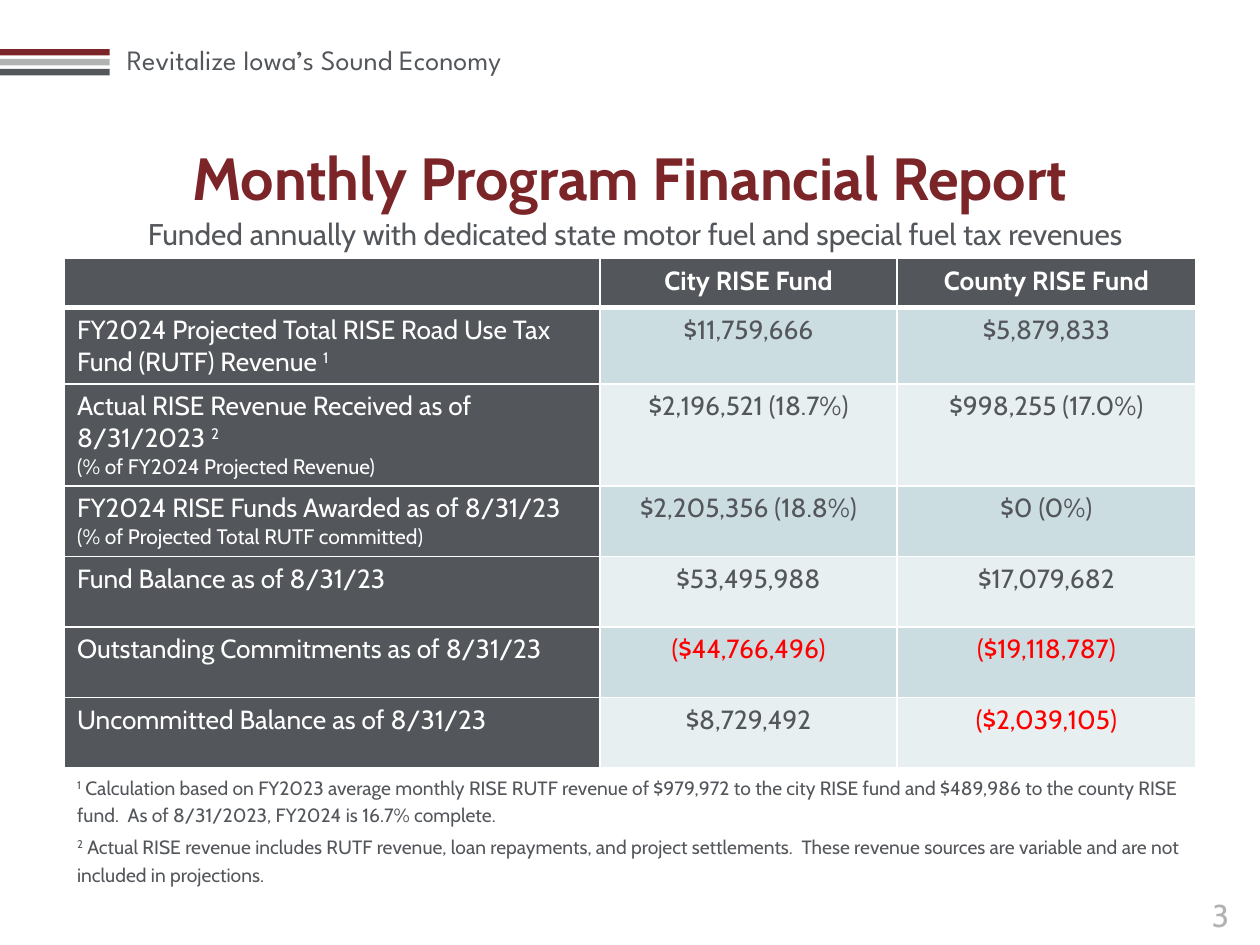
import pptx
import pptx.util
import pptx.dml.color
import pptx.enum.shapes
import pptx.enum.text
import pptx.oxml
import pptx.oxml.ns

Cm, Pt = pptx.util.Cm, pptx.util.Pt
ALIGN = pptx.enum.text.PP_ALIGN
ANCHOR = pptx.enum.text.MSO_ANCHOR

WHITE, GREY, SILVER = "FFFFFF", "53565A", "B1B3B3"
MAROON, RED = "7C2529", "FF0000"
BANDS = ["CCDDE2", "E7EFF1"]


def color(code):
    return pptx.dml.color.RGBColor.from_string(code)


class Deck:
    font = "Cabin"

    def __init__(self, wide, high):
        self.prs = pptx.Presentation()
        self.prs.slide_width, self.prs.slide_height = Cm(wide), Cm(high)
        self.slide = self.prs.slides.add_slide(self.prs.slide_layouts[1])

    def run(self, para, text, size, tone=GREY, bold=False, raised=False, font=None):
        run = para.add_run()
        run.text = text
        run.font.name = font or self.font
        run.font.size = Pt(size)
        run.font.bold = bold
        run.font.color.rgb = color(tone)
        if raised:
            run._r.get_or_add_rPr().set("baseline", "30000")

    def place(self, shape, left, top, wide, high):
        shape.left, shape.top = Cm(left), Cm(top)
        shape.width, shape.height = Cm(wide), Cm(high)
        shape.text_frame.word_wrap = True
        shape.text_frame.auto_size = pptx.enum.text.MSO_AUTO_SIZE.NONE
        return shape.text_frame

    def title(self, text, size, *box):
        frame = self.place(self.slide.shapes.title, *box)
        frame.vertical_anchor = ANCHOR.MIDDLE
        para = frame.paragraphs[0]
        para.alignment = ALIGN.CENTER
        self.run(para, text, size, MAROON, bold=True)

    def notes(self, lines, size, *box):
        """Numbered footnotes in the body placeholder."""
        frame = self.place(self.slide.placeholders[1], *box)
        for num, text in enumerate(lines, 1):
            para = frame.paragraphs[0] if num == 1 else frame.add_paragraph()
            props = para._p.get_or_add_pPr()
            props.set("marL", "0")
            props.set("indent", "0")
            props.append(pptx.oxml.parse_xml(
                f'<a:buNone {pptx.oxml.ns.nsdecls("a")}/>'))
            para.line_spacing = 1.2
            para.space_before = Pt(0 if num == 1 else 0.2 * size)
            self.run(para, str(num), size, raised=True)
            self.run(para, " " + text, size)

    def label(self, text, size, *box, tone=GREY, align=ALIGN.LEFT, font=None):
        frame = self.place(self.slide.shapes.add_textbox(0, 0, 0, 0), *box)
        para = frame.paragraphs[0]
        para.alignment = align
        self.run(para, text, size, tone, font=font)

    def bar(self, tone, left, top, wide, high):
        bar = self.slide.shapes.add_shape(
            pptx.enum.shapes.MSO_SHAPE.RECTANGLE,
            Cm(left), Cm(top), Cm(wide), Cm(high))
        bar.shadow.inherit = False
        bar.fill.solid()
        bar.fill.fore_color.rgb = color(tone)
        bar.line.fill.background()

    def border(self, cell, top, bottom):
        """White cell lines; top and bottom widths in points."""
        props = cell._tc.get_or_add_tcPr()
        sides = [("lnL", 1), ("lnR", 1), ("lnT", top), ("lnB", bottom)]
        for spot, (side, width) in enumerate(sides):
            props.insert(spot, pptx.oxml.parse_xml(
                f'<a:{side} {pptx.oxml.ns.nsdecls("a")} w="{Pt(width)}">'
                f'<a:solidFill><a:srgbClr val="{WHITE}"/></a:solidFill>'
                f'</a:{side}>'))

    def cell(self, cell, fill, size, text, tone, bold=False, align=ALIGN.CENTER,
             mark="", small=""):
        cell.fill.solid()
        cell.fill.fore_color.rgb = color(fill)
        para = cell.text_frame.paragraphs[0]
        para.alignment = align
        if text:
            self.run(para, text, size, tone, bold)
        else:
            para._p.append(pptx.oxml.parse_xml(
                f'<a:endParaRPr {pptx.oxml.ns.nsdecls("a")} sz="{size * 100}"/>'))
        if mark:
            self.run(para, mark, size, tone, raised=True)
        if small:
            self.run(cell.text_frame.add_paragraph(), small, 12, tone)

    def table(self, head, rows, size, left, top, cols, highs):
        grid = self.slide.shapes.add_table(
            len(rows) + 1, len(head), Cm(left), Cm(top),
            Cm(sum(cols)), Cm(sum(highs))).table
        for col, wide in zip(grid.columns, cols):
            col.width = Cm(wide)
        for row, high in zip(grid.rows, highs):
            row.height = Cm(high)
        for c, text in enumerate(head):
            self.cell(grid.cell(0, c), GREY, size, text, WHITE, bold=True)
            self.border(grid.cell(0, c), 1, 3)
        for r, (text, mark, small, *sums) in enumerate(rows, 1):
            self.cell(grid.cell(r, 0), GREY, size, text, WHITE,
                      align=ALIGN.LEFT, mark=mark, small=small)
            for c, value in enumerate(sums, 1):
                tone = RED if value.startswith("(") else GREY
                self.cell(grid.cell(r, c), BANDS[(r - 1) % 2], size, value, tone)
            for c in range(len(head)):
                self.border(grid.cell(r, c), 3 if r == 1 else 1, 1)


HEAD = ["", "City RISE Fund", "County RISE Fund"]
# label, footnote mark, small line, city, county
ROWS = [
    ("FY2024 Projected Total RISE Road Use Tax Fund (RUTF) Revenue ", "1", "",
     "$11,759,666", "$5,879,833"),
    ("Actual RISE Revenue Received as of 8/31/2023 ", "2",
     "(% of FY2024 Projected Revenue)", "$2,196,521 (18.7%)", "$998,255 (17.0%)"),
    ("FY2024 RISE Funds Awarded as of 8/31/23", "",
     "(% of Projected Total RUTF committed)", "$2,205,356 (18.8%)", "$0 (0%)"),
    ("Fund Balance as of 8/31/23", "", "", "$53,495,988", "$17,079,682"),
    ("Outstanding Commitments as of 8/31/23", "", "",
     "($44,766,496)", "($19,118,787)"),
    ("Uncommitted Balance as of 8/31/23", "", "", "$8,729,492", "($2,039,105)"),
]
NOTES = [
    "Calculation based on FY2023 average monthly RISE RUTF revenue of $979,972 "
    "to the city RISE fund and $489,986 to the county RISE fund.  "
    "As of 8/31/2023, FY2024 is 16.7% complete.",
    "Actual RISE revenue includes RUTF revenue, loan repayments, and project "
    "settlements.  These revenue sources are variable and are not included in "
    "projections.",
]


def main():
    deck = Deck(25.4, 19.05)

    # Running header and page number
    deck.label("Revitalize Iowa’s Sound Economy", 16, 2.31, 0.74, 10.39, 0.94,
               font="League Spartan")
    for step, tone in enumerate([MAROON, SILVER, GREY]):
        deck.bar(tone, 0, 0.99 + 0.2 * step, 2.21, 0.13)
    deck.label("3", 18, 23.5, 17.93, 2.21, 1.02, tone=SILVER, align=ALIGN.CENTER)

    # Title and subtitle
    deck.title("Monthly Program Financial Report", 34, 0.3, 3.07, 24.79, 0.99)
    deck.label("Funded annually with dedicated state motor fuel and special fuel "
               "tax revenues", 17.1, 1.4, 4.22, 22.81, 0.99, align=ALIGN.CENTER)

    # Fund table and footnotes
    deck.table(HEAD, ROWS, 15, 1.3, 5.21, [10.8, 5.98, 6.03],
               [0.99] + [1.42] * len(ROWS))
    deck.notes(NOTES, 11, 1.3, 15.42, 22.81, 3.4)

    deck.prs.save("out.pptx")


if __name__ == "__main__":
    main()
